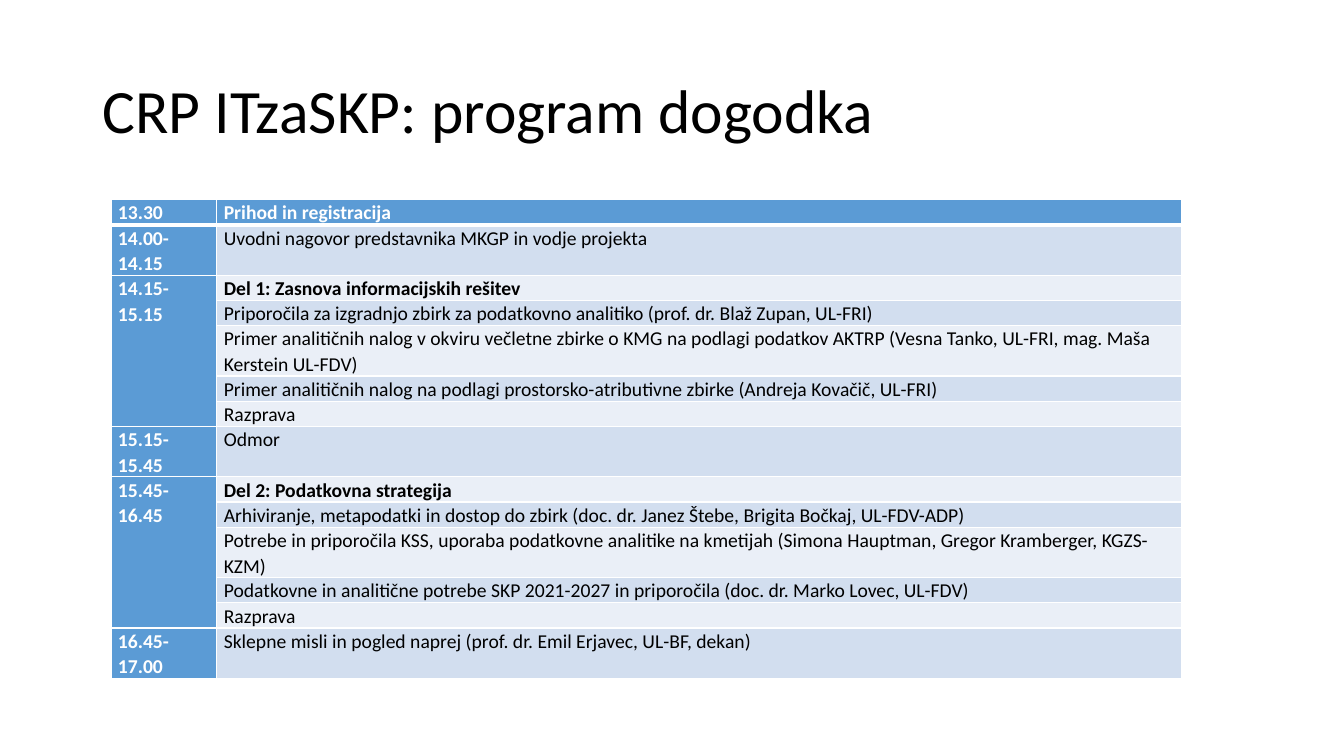
"""Builds the programme slide of the CRP ITzaSKP event."""
from lxml.etree import SubElement
from pptx import Presentation
from pptx.dml.color import RGBColor
from pptx.enum.text import MSO_ANCHOR as Anchor
from pptx.oxml.ns import qn
from pptx.util import Inches, Pt

COLORS = {
    "text": "000000",
    "white": "FFFFFF",
    "accent": "5B9BD5",
    "band_dark": "D2DEEF",
    "band_light": "EAEFF7",
}

PROGRAMME = [
    ("13.30", ["Prihod in registracija"]),
    ("14.00-14.15", ["Uvodni nagovor predstavnika MKGP in vodje projekta"]),
    ("14.15-15.15", [
        "Del 1: Zasnova informacijskih rešitev",
        "Priporočila za izgradnjo zbirk za podatkovno analitiko (prof. dr. Blaž Zupan, UL-FRI)",
        "Primer analitičnih nalog v okviru večletne zbirke o KMG na podlagi podatkov AKTRP "
        "(Vesna Tanko, UL-FRI, mag. Maša Kerstein UL-FDV)",
        "Primer analitičnih nalog na podlagi prostorsko-atributivne zbirke (Andreja Kovačič, UL-FRI)",
        "Razprava",
    ]),
    ("15.15-15.45", ["Odmor"]),
    ("15.45-16.45", [
        "Del 2: Podatkovna strategija",
        "Arhiviranje, metapodatki in dostop do zbirk (doc. dr. Janez Štebe, Brigita Bočkaj, UL-FDV-ADP)",
        "Potrebe in priporočila KSS, uporaba podatkovne analitike na kmetijah "
        "(Simona Hauptman, Gregor Kramberger, KGZS-KZM)",
        "Podatkovne in analitične potrebe SKP 2021-2027 in priporočila (doc. dr. Marko Lovec, UL-FDV)",
        "Razprava",
    ]),
    ("16.45-17.00", ["Sklepne misli in pogled naprej (prof. dr. Emil Erjavec, UL-BF, dekan)"]),
]


class ProgrammeSlide:
    font = "Calibri"
    title_size = 44
    table_size = 14
    line_height = 0.25
    wrap_length = 105

    def __init__(self, deck):
        self.slide = deck.slides.add_slide(deck.slide_layouts[6])

    def set_text(self, frame, text, size, color, bold=False, spacing=1.0):
        frame.text = text
        para = frame.paragraphs[0]
        para.line_spacing = spacing
        for span in para.runs:
            span.font.name = self.font
            span.font.size = Pt(size)
            span.font.bold = bold
            span.font.color.rgb = RGBColor.from_string(COLORS[color])

    def title(self, text, left, top, width, height):
        box = self.slide.shapes.add_textbox(Inches(left), Inches(top), Inches(width), Inches(height))
        frame = box.text_frame
        frame.word_wrap = True
        frame.vertical_anchor = Anchor.MIDDLE
        self.set_text(frame, text, self.title_size, "text", spacing=0.9)

    def borders(self, cell, top=1, bottom=1):
        properties = cell._tc.get_or_add_tcPr()
        widths = {"a:lnL": 1, "a:lnR": 1, "a:lnT": top, "a:lnB": bottom}
        for side, width in widths.items():
            line = SubElement(properties, qn(side), w=str(Pt(width)))
            fill = SubElement(line, qn("a:solidFill"))
            SubElement(fill, qn("a:srgbClr"), val=COLORS["white"])

    def cell(self, cell, text, row, fill, color, bold):
        self.borders(cell, top=3 if row == 1 else 1, bottom=3 if row == 0 else 1)
        cell.fill.solid()
        cell.fill.fore_color.rgb = RGBColor.from_string(COLORS[fill])
        cell.margin_left = cell.margin_right = Inches(0.07)
        cell.margin_top = cell.margin_bottom = 0
        self.set_text(cell.text_frame, text, self.table_size, color, bold, 1.07)

    def programme(self, sessions, left, top, widths):
        rows = [(time if index == 0 else "", item, len(items) > 1 and index == 0)
                for time, items in sessions for index, item in enumerate(items)]
        lines = [2 if len(item) > self.wrap_length or "-" in time and not heading else 1
                 for time, item, heading in rows]
        frame = self.slide.shapes.add_table(
            len(rows), len(widths), Inches(left), Inches(top),
            Inches(sum(widths)), Inches(sum(lines) * self.line_height))
        table = frame.table
        for column, width in zip(table.columns, widths):
            column.width = Inches(width)
        for row, (time, item, heading) in enumerate(rows):
            table.rows[row].height = Inches(lines[row] * self.line_height)
            header = row == 0
            band = "accent" if header else "band_dark" if row % 2 else "band_light"
            self.cell(table.cell(row, 0), time, row, "accent", "white", True)
            self.cell(table.cell(row, 1), item, row, band, "white" if header else "text", header or heading)
        start = 0
        for _, items in sessions:
            end = start + len(items) - 1
            if end > start:
                table.cell(start, 0).merge(table.cell(end, 0))
            start = end + 1


def main():
    deck = Presentation()
    deck.slide_width = Inches(13.33)
    deck.slide_height = Inches(7.5)
    page = ProgrammeSlide(deck)
    page.title("CRP ITzaSKP: program dogodka", 0.92, 0.4, 11.5, 1.45)
    page.programme(PROGRAMME, 1.1, 1.98, [1.05, 9.57])
    deck.save("out.pptx")


if __name__ == "__main__":
    main()
